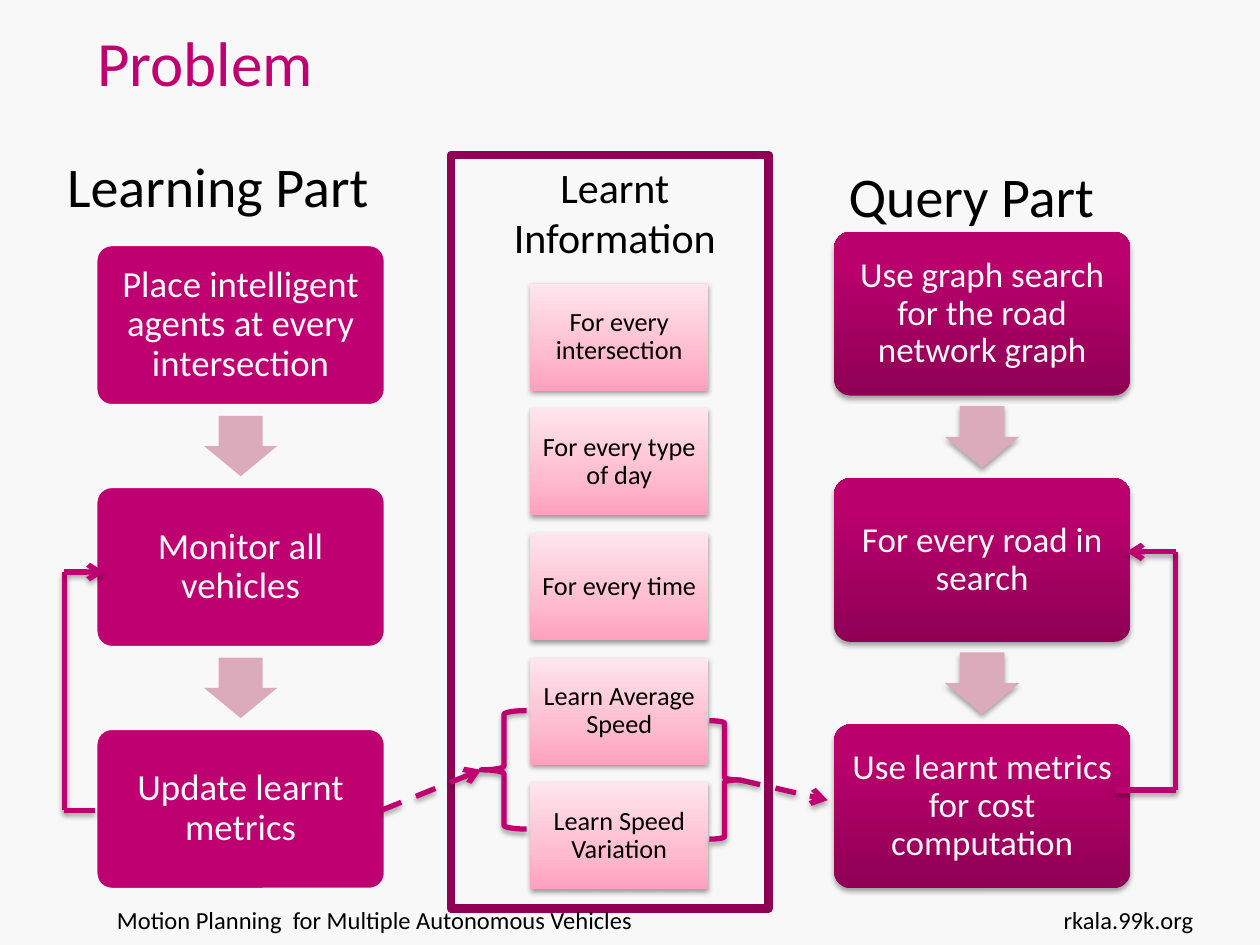
"""Build the Problem slide: learning flow, learnt information and query flow."""
from lxml import etree
from pptx import Presentation
from pptx.dml.color import RGBColor
from pptx.enum.dml import MSO_LINE
from pptx.enum.shapes import MSO_CONNECTOR, MSO_SHAPE
from pptx.enum.text import MSO_ANCHOR, PP_ALIGN
from pptx.oxml import parse_xml
from pptx.oxml.ns import nsdecls, qn
from pptx.util import Inches, Pt

RECT, ROUND = MSO_SHAPE.RECTANGLE, MSO_SHAPE.ROUNDED_RECTANGLE
DOWN = MSO_SHAPE.DOWN_ARROW
LEFT_BRACE, RIGHT_BRACE = MSO_SHAPE.LEFT_BRACE, MSO_SHAPE.RIGHT_BRACE
STRAIGHT, DASH = MSO_CONNECTOR.STRAIGHT, MSO_LINE.DASH
LEFT, CENTER, RIGHT = PP_ALIGN.LEFT, PP_ALIGN.CENTER, PP_ALIGN.RIGHT
TOP, MIDDLE, BOTTOM = MSO_ANCHOR.TOP, MSO_ANCHOR.MIDDLE, MSO_ANCHOR.BOTTOM

BLACK = RGBColor(0x00, 0x00, 0x00)
PAPER = RGBColor(0xF8, 0xF8, 0xF8)
MAGENTA = RGBColor(0xBF, 0x00, 0x71)
PLUM = RGBColor(0x8F, 0x00, 0x55)
ROSE = RGBColor(0xDC, 0xAB, 0xBB)
PINK_STOPS = [(0, RGBColor(0xFF, 0xA0, 0xBF)), (35, RGBColor(0xFF, 0xBC, 0xD1)),
              (100, RGBColor(0xFF, 0xE5, 0xED))]
MAGENTA_STOPS = [(0, RGBColor(0x8F, 0x00, 0x54)), (80, RGBColor(0xB9, 0x00, 0x6D)),
                 (100, RGBColor(0xBA, 0x00, 0x6E))]

TITLE = ("Problem", (0.67, 0, 6.77, 0.84))
LABELS = [
    ("Motion Planning  for Multiple Autonomous Vehicles", (0.83, 7.13, 6.93, 0.52), 14, LEFT),
    ("rkala.99k.org", (8.07, 7.13, 1.5, 0.52), 14, RIGHT),
    ("Learnt Information", (3.58, 1.23, 2.6, 0.91), 24, CENTER),
    ("Learning Part", (-0.04, 1.15, 3.54, 0.64), 32, CENTER),
    ("Query Part", (5.94, 1.23, 3.54, 0.64), 32, CENTER),
]
FRAME = (3.58, 1.23, 2.52, 5.98)
CARDS = ["For every intersection", "For every type of day", "For every time",
         "Learn Average Speed", "Learn Speed Variation"]
CARD_BOX, CARD_PITCH = (4.21, 2.25, 1.41, 0.85), 0.99
FLOWS = [
    dict(steps=["Place intelligent agents at every intersection", "Monitor all vehicles",
                "Update learnt metrics"],
         box=(0.76, 1.94, 2.3, 1.28), pitch=1.92, arrow=(0.58, 0.48),
         size=21, inset=0.09, fill=MAGENTA, line=(PAPER, 2), shadow=False),
    dict(steps=["Use graph search for the road network graph", "For every road in search",
                "Use learnt metrics for cost computation"],
         box=(6.62, 1.84, 2.35, 1.3), pitch=1.955, arrow=(0.59, 0.49),
         size=20, inset=0.08, fill=MAGENTA_STOPS, line=None, shadow=True),
]
BRACES = [(LEFT_BRACE, (3.82, 5.64, 0.36, 0.94)), (RIGHT_BRACE, (5.63, 5.72, 0.24, 0.94))]
LINES = [  # start, end, dashed, arrowhead
    ((3.03, 6.43), (3.82, 6.11), True, True),
    ((5.87, 6.19), (6.57, 6.35), True, True),
    ((0.51, 4.54), (0.51, 6.43), False, False),
    ((0.51, 6.43), (0.75, 6.43), False, False),
    ((0.51, 4.54), (0.83, 4.54), False, True),
    ((9.33, 4.38), (9.33, 6.27), False, False),
    ((9.33, 6.27), (8.86, 6.27), False, False),
    ((9.33, 4.38), (8.94, 4.38), False, True),
]


def inches(values):
    return [Inches(v) for v in values]


def assign(obj, values):
    for name, value in values.items():
        setattr(obj, name, value)


def write(sp, text, size, color, align, anchor=TOP, inset=None, spacing=None, wrap=True):
    tf = sp.text_frame
    assign(tf, dict(word_wrap=wrap, vertical_anchor=anchor))
    if inset is not None:
        sides = ("left", "top", "right", "bottom")
        assign(tf, {f"margin_{side}": Inches(inset) for side in sides})
    p = tf.paragraphs[0]
    assign(p, dict(alignment=align, line_spacing=spacing))
    r = p.add_run()
    r.text = text
    assign(r.font, dict(name="Calibri", size=Pt(size)))
    r.font.color.rgb = color


def add_shadow(sp, alpha=35, dist=1.8):
    pr = sp._element.spPr
    for old in pr.findall(qn("a:effectLst")):
        pr.remove(old)
    pr.append(parse_xml(
        f'<a:effectLst {nsdecls("a")}><a:outerShdw blurRad="{Pt(3.1)}" dist="{Pt(dist)}" '
        f'dir="5400000" rotWithShape="0"><a:srgbClr val="000000">'
        f'<a:alpha val="{alpha * 1000}"/></a:srgbClr></a:outerShdw></a:effectLst>'))


def set_fill(sp, fill):
    if fill is None:
        sp.fill.background()
        return
    sp.fill.solid()
    if isinstance(fill, RGBColor):
        sp.fill.fore_color.rgb = fill
        return
    stops = "".join(f'<a:gs pos="{pos * 1000}"><a:srgbClr val="{color}"/></a:gs>'
                    for pos, color in fill)
    pr = sp._element.spPr
    pr.replace(pr.find(qn("a:solidFill")), parse_xml(
        f'<a:gradFill {nsdecls("a")} rotWithShape="1"><a:gsLst>{stops}</a:gsLst>'
        '<a:lin ang="16200000" scaled="0"/></a:gradFill>'))


def add_shape(s, kind, box, fill=None, line=None, adj=()):
    sp = s.shapes.add_shape(kind, *inches(box))
    sp.shadow.inherit = False
    for i, value in enumerate(adj):
        sp.adjustments[i] = value
    set_fill(sp, fill)
    if line:
        sp.line.color.rgb, sp.line.width = line[0], Pt(line[1])
    else:
        sp.line.fill.background()
    return sp


def add_flow(s, steps, box, pitch, arrow, size, inset, fill, line, shadow):
    x, y, w, h = box
    aw, ah = arrow
    for i, step in enumerate(steps):
        top = y + i * pitch
        sp = add_shape(s, ROUND, (x, top, w, h), fill, line, [0.1])
        write(sp, step, size, PAPER, CENTER, MIDDLE, inset, 0.9)
        parts = [sp]
        if i < len(steps) - 1:
            mid = top + (h + pitch) / 2
            parts.append(add_shape(s, DOWN, (x + (w - aw) / 2, mid - ah / 2, aw, ah),
                                   ROSE, adj=[0.6, 0.5]))
        if shadow:
            for part in parts:
                add_shadow(part)


def add_line(s, start, end, dashed, arrowhead):
    sp = s.shapes.add_connector(STRAIGHT, *inches(start + end))
    sp.line.color.rgb, sp.line.width = MAGENTA, Pt(3)
    if dashed:
        sp.line.dash_style = DASH
    if arrowhead:
        etree.SubElement(sp.line._get_or_add_ln(), qn("a:tailEnd"), type="arrow")
    add_shadow(sp)


def main():
    prs = Presentation()
    prs.slide_width, prs.slide_height = inches((10, 7.5))
    s = prs.slides.add_slide(prs.slide_layouts[5])
    s.background.fill.solid()
    s.background.fill.fore_color.rgb = PAPER

    text, box = TITLE
    title = s.shapes.title
    assign(title, dict(zip(("left", "top", "width", "height"), inches(box))))
    write(title, text, 36, MAGENTA, LEFT, BOTTOM, wrap=False)

    x, y, w, h = CARD_BOX
    for i, card in enumerate(CARDS):
        sp = add_shape(s, RECT, (x, y + i * CARD_PITCH, w, h), PINK_STOPS)
        write(sp, card, 15, BLACK, CENTER, MIDDLE, 0.06, 0.9)
        add_shadow(sp, 38, 1.6)
    for flow in FLOWS:
        add_flow(s, **flow)
    for kind, box in BRACES:
        add_shadow(add_shape(s, kind, box, line=(MAGENTA, 3)))
    add_shape(s, RECT, FRAME, line=(PLUM, 5))
    for text, box, size, align in LABELS:
        write(s.shapes.add_textbox(*inches(box)), text, size, BLACK, align)
    for line in LINES:
        add_line(s, *line)
    prs.save("out.pptx")


if __name__ == "__main__":
    main()
